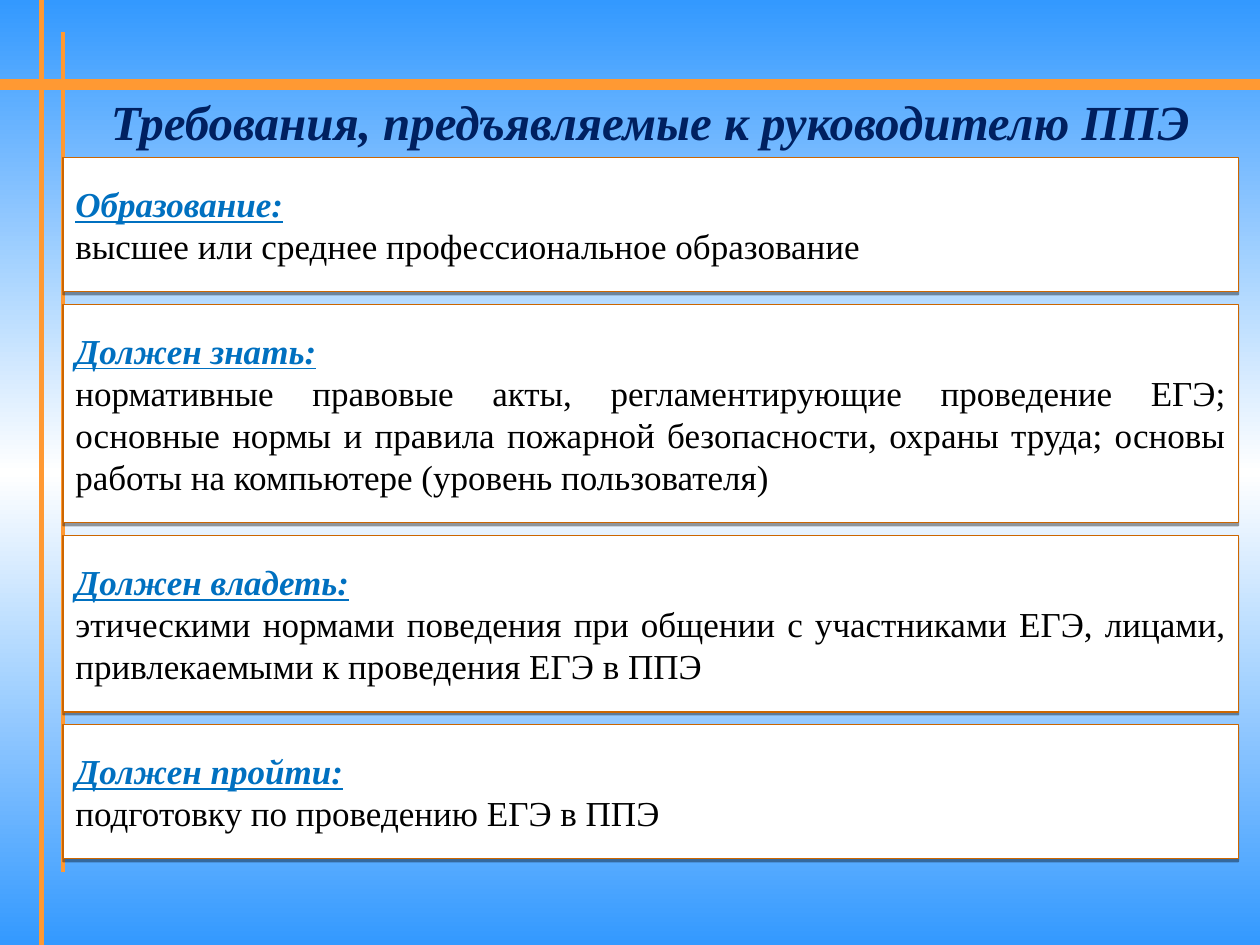
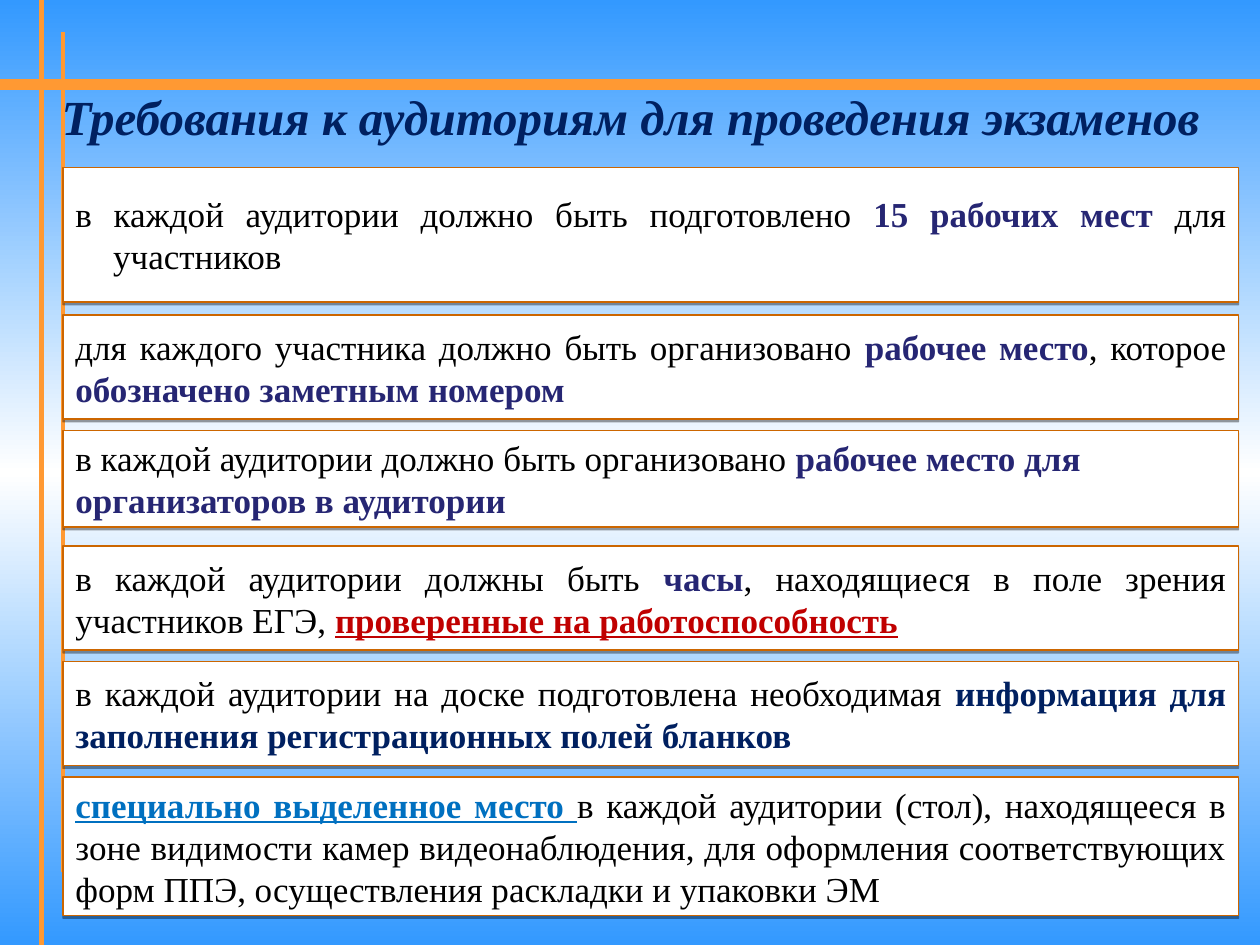
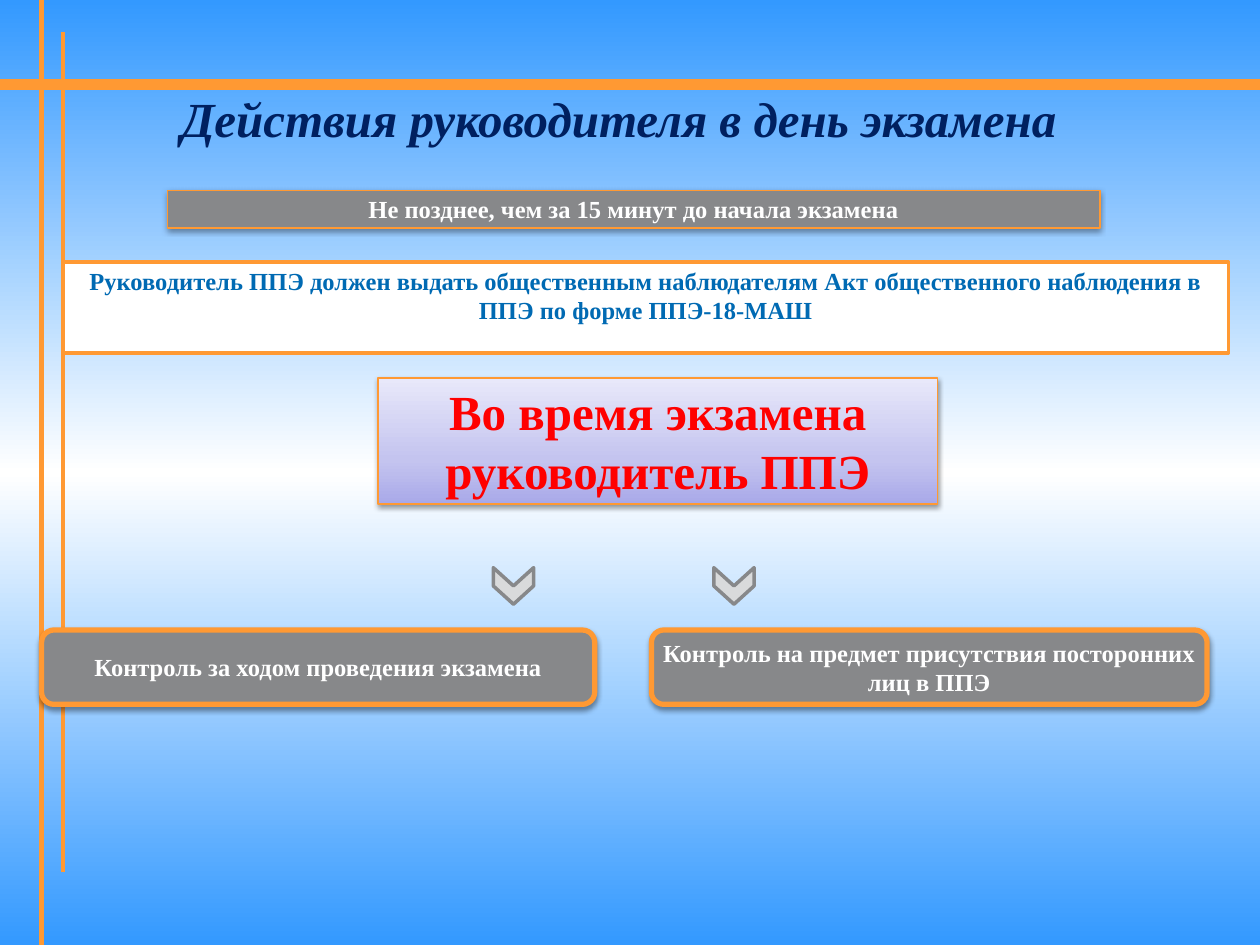
import copy
import dataclasses

import pptx
import pptx.dml.color
import pptx.enum.shapes
import pptx.enum.text
import pptx.oxml
import pptx.oxml.ns
import pptx.util

Inches = pptx.util.Inches
Pt = pptx.util.Pt
SHAPE = pptx.enum.shapes.MSO_SHAPE
ALIGN = pptx.enum.text.PP_ALIGN
ANCHOR = pptx.enum.text.MSO_ANCHOR
AUTO = pptx.enum.text.MSO_AUTO_SIZE


@dataclasses.dataclass(frozen=True)
class Theme:
    """Colours, type sizes and common measures of the deck."""
    font: str = "Times New Roman"
    orange: str = "FF9933"
    brown: str = "CC6600"
    white: str = "FFFFFF"
    black: str = "000000"
    navy: str = "002060"
    violet: str = "262673"
    blue: str = "0070C0"
    steel: str = "006AB3"
    dark_red: str = "C00000"
    red: str = "FF0000"
    grey: str = "87888A"
    light_grey: str = "D9DADB"
    sky: tuple = ((0, "3399FF"), (0.5, "FFFFFF"), (1, "3399FF"))
    lilac: tuple = ((0, "A9A9E9"), (0.35, "C4C4EF"), (1, "E8E8FA"))
    title: int = 28
    body: int = 20
    note: int = 14
    line_height: float = 1 / 3
    normal_inset: tuple = (0.1, 0.05)
    small_inset: tuple = (0.06, 0.03)


T = Theme()


def rgb(color):
    """Return an RGB colour from its hex text."""
    return pptx.dml.color.RGBColor.from_string(color)


def paint_gradient(fill, stops, angle):
    """Fill with a linear gradient of any number of stops."""
    fill.gradient()
    fill.gradient_angle = angle
    first = fill.gradient_stops[0]._gs
    for _ in stops[2:]:
        first.addnext(copy.deepcopy(first))
    for stop, (position, color) in zip(fill.gradient_stops, stops):
        stop.position = position
        stop.color.rgb = rgb(color)


def add_shadow(sp, blur):
    """Drop a soft shadow straight below a shape."""
    effects = sp._element.spPr.find(pptx.oxml.ns.qn("a:effectLst"))
    effects.append(pptx.oxml.parse_xml(
        f'<a:outerShdw {pptx.oxml.ns.nsdecls("a")} blurRad="{Pt(blur)}" '
        f'dist="{Pt(1.6)}" dir="5400000" rotWithShape="0">'
        '<a:srgbClr val="000000"><a:alpha val="38000"/></a:srgbClr></a:outerShdw>'))


def add_shape(s, kind, box, fill, line, width, blur=None):
    """Add a filled, outlined shape, with a shadow when blur is given."""
    sp = s.shapes.add_shape(kind, *map(Inches, box))
    sp.shadow.inherit = False
    if isinstance(fill, tuple):
        paint_gradient(sp.fill, fill, 90)
    else:
        sp.fill.solid()
        sp.fill.fore_color.rgb = rgb(fill)
    sp.line.color.rgb = rgb(line)
    sp.line.width = Pt(width)
    if blur is not None:
        add_shadow(sp, blur)
    return sp


def write(sp, paragraphs, size, align, inset=T.normal_inset, anchor=ANCHOR.TOP, grow=False):
    """Write paragraphs of (text, colour, flags) runs; flags are b, i and u."""
    tf = sp.text_frame
    tf.word_wrap = True
    tf.auto_size = AUTO.SHAPE_TO_FIT_TEXT if grow else AUTO.NONE
    tf.vertical_anchor = anchor
    tf.margin_left = tf.margin_right = Inches(inset[0])
    tf.margin_top = tf.margin_bottom = Inches(inset[1])
    for i, runs in enumerate(paragraphs):
        p = tf.add_paragraph() if i else tf.paragraphs[0]
        p.alignment = align
        for text, color, flags in runs:
            r = p.add_run()
            r.text = text
            r.font.name = T.font
            r.font.size = Pt(size)
            r.font.color.rgb = rgb(color)
            r.font.bold = "b" in flags
            r.font.italic = "i" in flags
            r.font.underline = "u" in flags


def add_title(s, text, box, inset=T.normal_inset, anchor=ANCHOR.MIDDLE):
    """Add the slide title in its box."""
    sp = s.shapes.add_textbox(*map(Inches, box))
    write(sp, [[(text, T.navy, "bi")]], T.title, ALIGN.CENTER, inset, anchor)


def add_card(s, top, lines, paragraphs, pad, align=ALIGN.JUSTIFY):
    """Add a white card as tall as its lines of text and return it."""
    height = 2 * pad + lines * T.line_height
    sp = add_shape(s, SHAPE.RECTANGLE, (0.5, top, 9.33, height), T.white, T.brown, 0.75, 0)
    write(sp, paragraphs, T.body, align, (0.1, pad), grow=True)
    return sp


def add_label(s, box, text, color, size, fill, width=0.75, kind=SHAPE.RECTANGLE,
              blur=None, anchor=ANCHOR.TOP, grow=False):
    """Add an orange-edged box with centred bold text."""
    sp = add_shape(s, kind, box, fill, T.orange, width, blur)
    write(sp, [[(text, color, "b")]], size, ALIGN.CENTER, T.small_inset, anchor, grow)


def dress_master(prs, s):
    """Give the master its background and its crossing orange lines."""
    master = prs.slide_master
    paint_gradient(master.background.fill, T.sky, 270)
    lines = [((0, 0.67, 10, 0.67), 6), ((0.33, 0, 0.33, 7.5), 3), ((0.5, 0.25, 0.5, 6.92), 2.25)]
    for i, (ends, width) in enumerate(lines):
        c = s.shapes.add_connector(pptx.enum.shapes.MSO_CONNECTOR.STRAIGHT, *map(Inches, ends))
        c.line.color.rgb = rgb(T.orange)
        c.line.width = Pt(width)
        c._element.spPr.append(pptx.oxml.parse_xml(
            f'<a:effectLst {pptx.oxml.ns.nsdecls("a")}/>'))
        c._element.nvCxnSpPr.cNvPr.set("id", str(100 + i))
        master.shapes.element.append(c._element)


def build_head_requirements(s):
    """Stack the requirements for the head of the exam point."""
    add_title(s, "Требования, предъявляемые к руководителю ППЭ", (0.5, 0.67, 9.32, 0.58))
    pad, gap, top = 0.2, 0.1, 1.25
    requirements = [
        ("Образование:", "высшее или среднее профессиональное образование", 2),
        ("Должен знать:", "нормативные правовые акты, регламентирующие проведение ЕГЭ; "
         "основные нормы и правила пожарной безопасности, охраны труда; "
         "основы работы на компьютере (уровень пользователя)", 4),
        ("Должен владеть:", "этическими нормами поведения при общении с участниками ЕГЭ, "
         "лицами, привлекаемыми к проведения ЕГЭ в ППЭ", 3),
        ("Должен пройти:", "подготовку по проведению ЕГЭ в ППЭ", 2),
    ]
    for heading, text, lines in requirements:
        add_card(s, top, lines, [[(heading, T.blue, "biu")], [(text, T.black, "")]], pad)
        top += 2 * pad + lines * T.line_height + gap


def build_room_requirements(s):
    """Stack the requirements for exam rooms."""
    add_title(s, "Требования к аудиториям для проведения экзаменов", (0.17, 0.67, 9.67, 0.5))
    sp = add_card(s, 1.33, 2, [[
        ("в каждой аудитории должно быть подготовлено ", T.black, ""),
        ("15 рабочих мест ", T.violet, "b"), ("для участников", T.black, "")]], 0.2)
    pPr = sp.text_frame.paragraphs[0]._p.get_or_add_pPr()
    pPr.set("marL", str(Inches(0.3)))
    pPr.set("indent", str(-Inches(0.3)))
    cards = [
        (2, 0.08, ALIGN.JUSTIFY, [
            ("для каждого участника должно быть организовано ", T.black, ""),
            ("рабочее место", T.violet, "b"), (", которое ", T.black, ""),
            ("обозначено заметным номером", T.violet, "b")]),
        (2, 0.05, ALIGN.LEFT, [
            ("в каждой аудитории должно быть организовано ", T.black, ""),
            ("рабочее место для организаторов в аудитории", T.violet, "b")]),
        (2, 0.08, ALIGN.JUSTIFY, [
            ("в каждой аудитории должны быть ", T.black, ""), ("часы", T.violet, "b"),
            (", находящиеся в поле зрения участников ЕГЭ, ", T.black, ""),
            ("проверенные на работоспособность", T.dark_red, "bu")]),
        (2, 0.08, ALIGN.JUSTIFY, [
            ("в каждой аудитории на доске подготовлена необходимая ", T.black, ""),
            ("информация для заполнения регистрационных полей бланков", T.navy, "b")]),
        (3, 0.05, ALIGN.JUSTIFY, [
            ("специально выделенное место ", T.blue, "bu"),
            ("в каждой аудитории (стол), находящееся в зоне видимости камер "
             "видеонаблюдения, для оформления соответствующих форм ППЭ, "
             "осуществления раскладки и упаковки ЭМ", T.black, "")]),
    ]
    for i, (lines, pad, align, runs) in enumerate(cards):
        add_card(s, 2.5 + i * 11 / 12, lines, [runs], pad, align)


def build_exam_day(s):
    """Show what the head does before and during the exam."""
    add_label(s, (1.33, 1.51, 7.4, 0.3), "Не позднее, чем за 15 минут до начала экзамена",
              T.white, T.note, T.grey, blur=3.1, grow=True)
    add_title(s, "Действия руководителя в день экзамена", (0.42, 0.67, 8.98, 0.75),
              T.small_inset, ANCHOR.TOP)
    add_label(s, (0.5, 2.08, 9.25, 0.72),
              "Руководитель ППЭ должен выдать общественным наблюдателям Акт "
              "общественного наблюдения в ППЭ по форме ППЭ-18-МАШ",
              T.steel, T.note, T.white, 2)
    add_label(s, (3, 3, 4.44, 1), "Во время экзамена руководитель ППЭ",
              T.red, T.title, T.lilac, blur=3.1, grow=True)
    controls = [
        (0.33, 4.39, 3.93, "Контроль за ходом проведения экзамена"),
        (5.17, 4.41, 5.68, "Контроль на предмет присутствия посторонних лиц в ППЭ"),
    ]
    for left, width, arrow_left, text in controls:
        add_label(s, (left, 5, width, 0.59), text, T.white, T.note, T.grey, 3,
                  SHAPE.ROUNDED_RECTANGLE, 3.1, ANCHOR.MIDDLE)
        arrow = add_shape(s, SHAPE.CHEVRON, (arrow_left, 4.49, 0.29, 0.32),
                          T.light_grey, T.grey, 2)
        arrow.rotation = 90


def main():
    """Build the deck and save it."""
    prs = pptx.Presentation()
    prs.slide_width, prs.slide_height = Inches(10), Inches(7.5)
    for build in (build_head_requirements, build_room_requirements, build_exam_day):
        build(prs.slides.add_slide(prs.slide_layouts[6]))
    dress_master(prs, prs.slides[0])
    prs.save("out.pptx")


if __name__ == "__main__":
    main()
